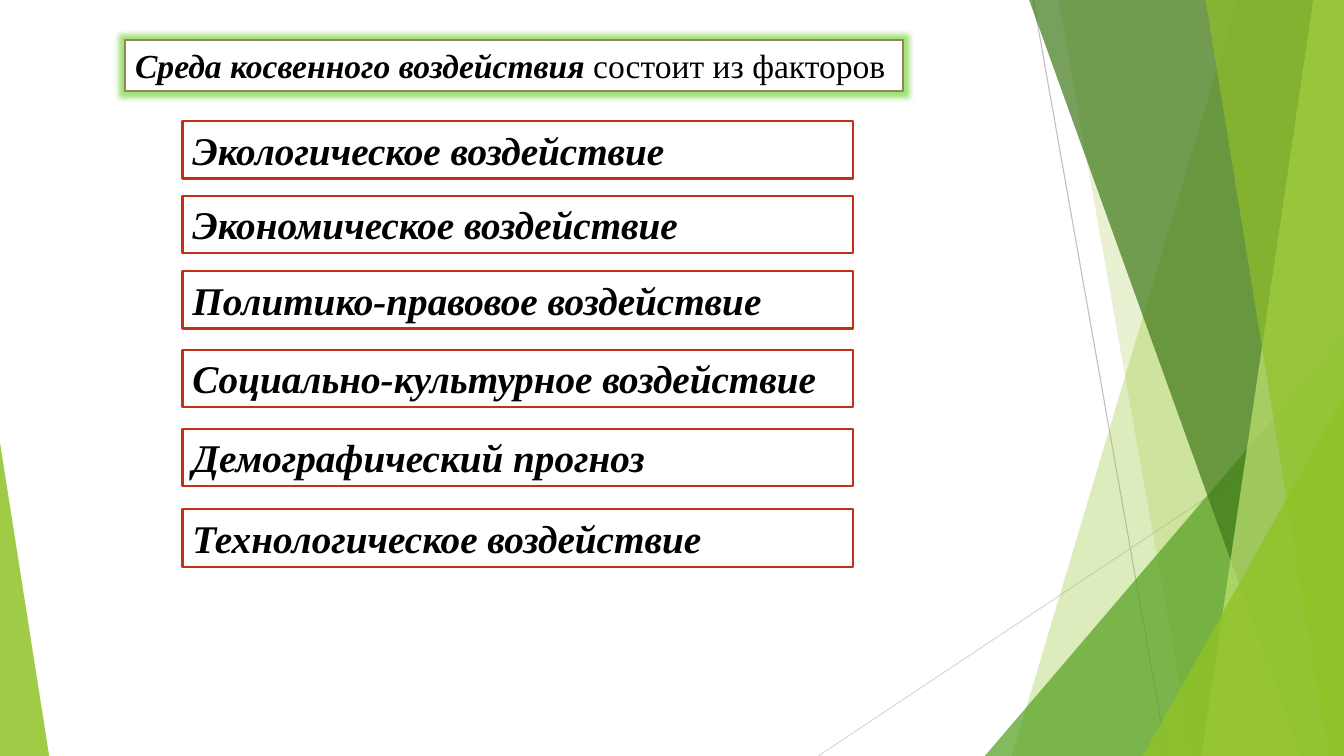
from lxml import etree
from pptx import Presentation
from pptx.dml.color import RGBColor
from pptx.enum.shapes import MSO_CONNECTOR, MSO_SHAPE
from pptx.enum.text import MSO_ANCHOR, PP_ALIGN
from pptx.oxml import parse_xml
from pptx.oxml.ns import nsdecls, qn
from pptx.util import Cm, Pt

W, H = 33.87, 19.05
FONT = "Times New Roman"
TITLE = [("Среда косвенного воздействия", True), (" состоит из факторов", False)]
FACTORS = [
    ("Экологическое воздействие", 3.05),
    ("Экономическое воздействие", 4.93),
    ("Политико-правовое воздействие", 6.83),
    ("Социально-культурное воздействие", 8.81),
    ("Демографический прогноз", 10.8),
    ("Технологическое воздействие", 12.83),
]
RAYS = [
    (26.04, 0, 29.41, H, "BFBFBF"),
    (W, 10.24, 20.62, H, "D9D9D9"),
]
FACETS = [
    ("wedge", (31.19, 25.5), "90C226", 30),
    ("wedge", (26.67, 30.05), "90C226", 20),
    ("triangle", (24.82, 8.46, 9.05, 1), "54A021", 72),
    ("wedge", (25.93, 32.79), "3F7819", 70),
    ("wedge", (33.1, 30.28), "C0E474", 70),
    ("wedge", (30.38, 33.48), "90C226", 65),
    ("triangle", (28.8, 9.98, 5.07, 1), "90C226", 80),
    ("triangle", (0, 11.15, 1.24, 0), "90C226", 85),
]


def rgb(value):
    return RGBColor.from_string(value)


def paint(shape, fill, alpha=100):
    shape.fill.solid()
    shape.fill.fore_color.rgb = rgb(fill)
    if alpha < 100:
        color = shape.fill._xPr.find(qn("a:solidFill"))[0]
        etree.SubElement(color, qn("a:alpha")).set("val", str(alpha * 1000))


def outline(shape, color, width):
    shape.line.color.rgb = rgb(color)
    shape.line.width = Pt(width)


def add_ray(x1, y1, x2, y2, color):
    ray = s.shapes.add_connector(MSO_CONNECTOR.STRAIGHT, Cm(x1), Cm(y1), Cm(x2), Cm(y2))
    outline(ray, color, 0.75)
    etree.SubElement(ray._element.spPr, qn("a:effectLst"))


def add_facet(kind, geometry, color, alpha):
    if kind == "wedge":
        top, bottom = geometry
        builder = s.shapes.build_freeform(Cm(top), Cm(-0.02))
        corners = [(W, -0.02), (W, H), (bottom, H)]
        builder.add_line_segments([(Cm(x), Cm(y)) for x, y in corners])
        facet = builder.convert_to_shape()
    else:
        x, y, width, apex = geometry
        facet = s.shapes.add_shape(
            MSO_SHAPE.ISOSCELES_TRIANGLE, Cm(x), Cm(y), Cm(width), Cm(H - y))
        facet.adjustments[0] = apex
    paint(facet, color, alpha)
    facet.line.fill.background()
    facet.shadow.inherit = False


def write(shape, runs, size, wrap):
    tf = shape.text_frame
    tf.word_wrap = wrap
    tf.vertical_anchor = MSO_ANCHOR.TOP
    p = tf.paragraphs[0]
    p.alignment = PP_ALIGN.LEFT
    p.font.name, p.font.size = FONT, Pt(size)
    p.font.color.rgb = rgb("000000")
    for text, strong in runs:
        r = p.add_run()
        r.text = text
        r.font.bold = r.font.italic = strong


prs = Presentation()
prs.slide_width, prs.slide_height = Cm(W), Cm(H)
s = prs.slides.add_slide(prs.slide_layouts[5])

for ray in RAYS:
    add_ray(*ray)
for facet in FACETS:
    add_facet(*facet)

title = s.shapes.title
title.left, title.top, title.width, title.height = Cm(3.15), Cm(1.01), Cm(19.6), Cm(1.28)
paint(title, "FFFFFF")
outline(title, "918655", 1.5)
title._element.spPr.append(parse_xml(
    f'<a:effectLst {nsdecls("a")}><a:glow rad="101600"><a:srgbClr val="62CC1E">'
    '<a:alpha val="60000"/></a:srgbClr></a:glow></a:effectLst>'))
write(title, TITLE, 24, False)

for factor, top in FACTORS:
    box = s.shapes.add_shape(MSO_SHAPE.RECTANGLE, Cm(4.6), Cm(top), Cm(16.89), Cm(1.45))
    box.shadow.inherit = False
    paint(box, "FFFFFF")
    outline(box, "C42F1A", 1.5)
    write(box, [(factor, True)], 28, True)

prs.save("out.pptx")
